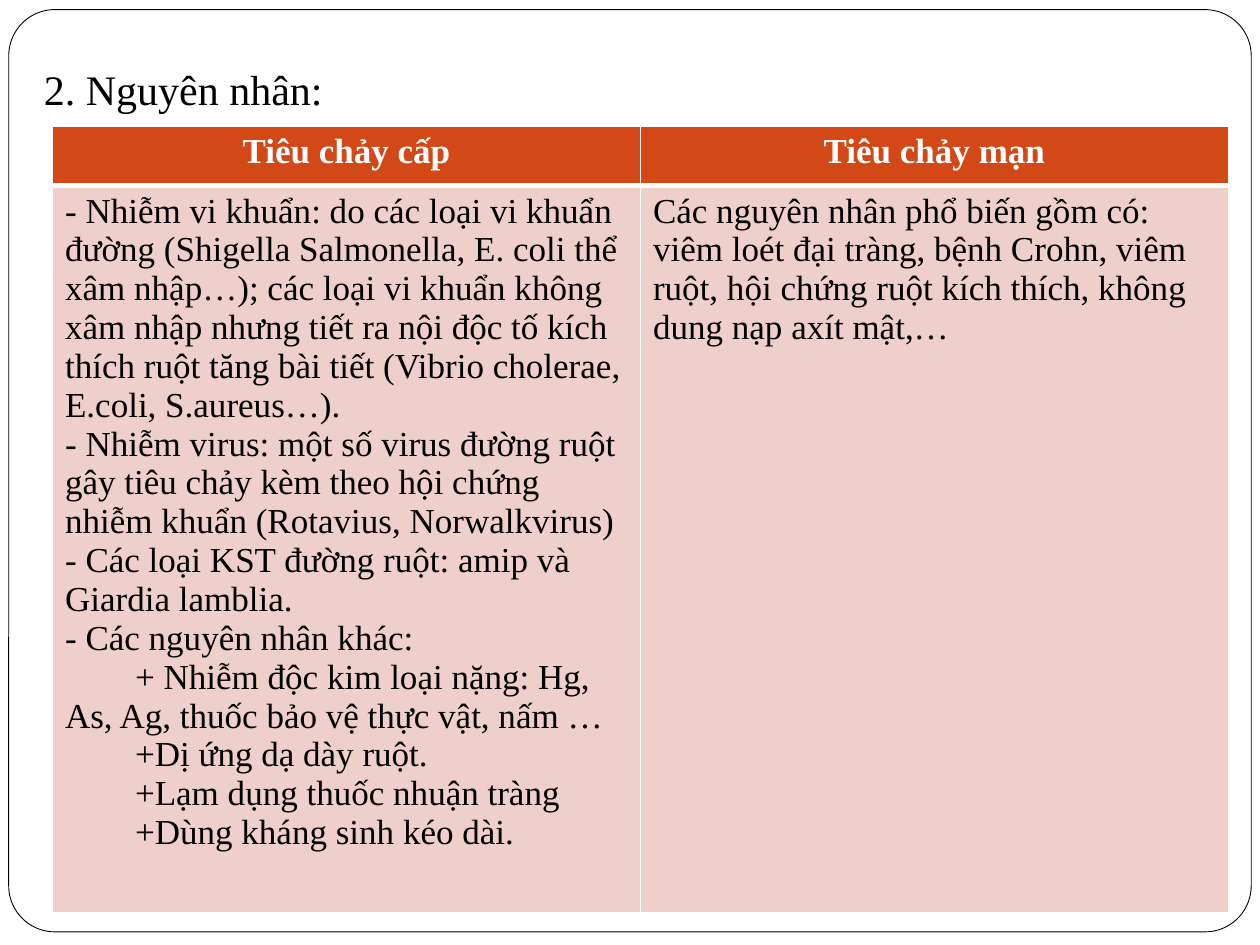
import lxml.etree
import pptx
import pptx.dml.color
import pptx.enum.shapes
import pptx.enum.text
import pptx.oxml.ns
import pptx.util

Pt = pptx.util.Pt
FONT = "Times New Roman"
BLACK, WHITE = "000000", "FFFFFF"
HEADER_FILL, BODY_FILL = "D34817", "EFCFCC"
SUB_ITEM_INDENT = 40

HEADERS = ["Tiêu chảy cấp", "Tiêu chảy mạn"]
ACUTE_CAUSES = [
    "- Nhiễm vi khuẩn: do các loại vi khuẩn đường (Shigella Salmonella, E. coli thể "
    "xâm nhập…); các loại vi khuẩn không xâm nhập nhưng tiết ra nội độc tố kích "
    "thích ruột tăng bài tiết (Vibrio cholerae, E.coli, S.aureus…).",
    "- Nhiễm virus: một số virus đường ruột gây tiêu chảy kèm theo hội chứng "
    "nhiễm khuẩn (Rotavius, Norwalkvirus)",
    "- Các loại KST đường ruột: amip và Giardia lamblia.",
    "- Các nguyên nhân khác:",
    "+ Nhiễm độc kim loại nặng: Hg, As, Ag, thuốc bảo vệ thực vật, nấm …",
    "+Dị ứng dạ dày ruột.",
    "+Lạm dụng thuốc nhuận tràng",
    "+Dùng kháng sinh kéo dài.",
]
CHRONIC_CAUSES = [
    "Các nguyên nhân phổ biến gồm có: viêm loét đại tràng, bệnh Crohn, viêm "
    "ruột, hội chứng ruột kích thích, không dung nạp axít mật,…",
]


def color(value):
    return pptx.dml.color.RGBColor.from_string(value)


def add_run(paragraph, text, size, text_color, bold=False):
    run = paragraph.add_run()
    run.text = text
    run.font.name = FONT
    run.font.size = Pt(size)
    run.font.bold = bold
    run.font.color.rgb = color(text_color)


def add_frame(slide):
    shape = slide.shapes.add_shape(
        pptx.enum.shapes.MSO_SHAPE.ROUNDED_RECTANGLE, Pt(5), Pt(5.5), Pt(710), Pt(527))
    shape.adjustments[0] = 0.05
    shape.shadow.inherit = False
    shape.fill.solid()
    shape.fill.fore_color.rgb = color(WHITE)
    shape.line.color.rgb = color(BLACK)
    shape.line.width = Pt(0.5)


def add_title(slide, text):
    shape = slide.shapes.add_textbox(Pt(18), Pt(32.5), Pt(666), Pt(36))
    shape.text_frame.word_wrap = True
    add_run(shape.text_frame.paragraphs[0], text, 24, BLACK)


def set_borders(cell, widths):
    properties = cell._tc.get_or_add_tcPr()
    for side, width in zip("LRTB", widths):
        line = lxml.etree.SubElement(
            properties, pptx.oxml.ns.qn(f"a:ln{side}"), w=str(Pt(width)))
        fill = lxml.etree.SubElement(line, pptx.oxml.ns.qn("a:solidFill"))
        lxml.etree.SubElement(fill, pptx.oxml.ns.qn("a:srgbClr"), val=WHITE)


def fill_cell(cell, texts, is_header):
    set_borders(cell, (1, 1, 1, 3) if is_header else (1, 1, 3, 1))
    cell.fill.solid()
    cell.fill.fore_color.rgb = color(HEADER_FILL if is_header else BODY_FILL)
    frame = cell.text_frame
    for index, text in enumerate(texts):
        paragraph = frame.add_paragraph() if index else frame.paragraphs[0]
        if is_header:
            paragraph.alignment = pptx.enum.text.PP_ALIGN.CENTER
        if text.startswith("+"):
            paragraph._p.get_or_add_pPr().set("indent", str(Pt(SUB_ITEM_INDENT)))
        add_run(paragraph, text, 20, WHITE if is_header else BLACK, is_header)


def add_causes_table(slide):
    table = slide.shapes.add_table(2, 2, Pt(30), Pt(72), Pt(672), Pt(419)).table
    for row, height in zip(table.rows, (34, 385)):
        row.height = Pt(height)
    for column, header in enumerate(HEADERS):
        fill_cell(table.cell(0, column), [header], True)
    for column, causes in enumerate((ACUTE_CAUSES, CHRONIC_CAUSES)):
        fill_cell(table.cell(1, column), causes, False)


def main():
    presentation = pptx.Presentation()
    presentation.slide_width = Pt(720)
    presentation.slide_height = Pt(540)
    slide = presentation.slides.add_slide(presentation.slide_layouts[6])
    add_frame(slide)
    add_title(slide, "2. Nguyên nhân:")
    add_causes_table(slide)
    presentation.save("out.pptx")


if __name__ == "__main__":
    main()
